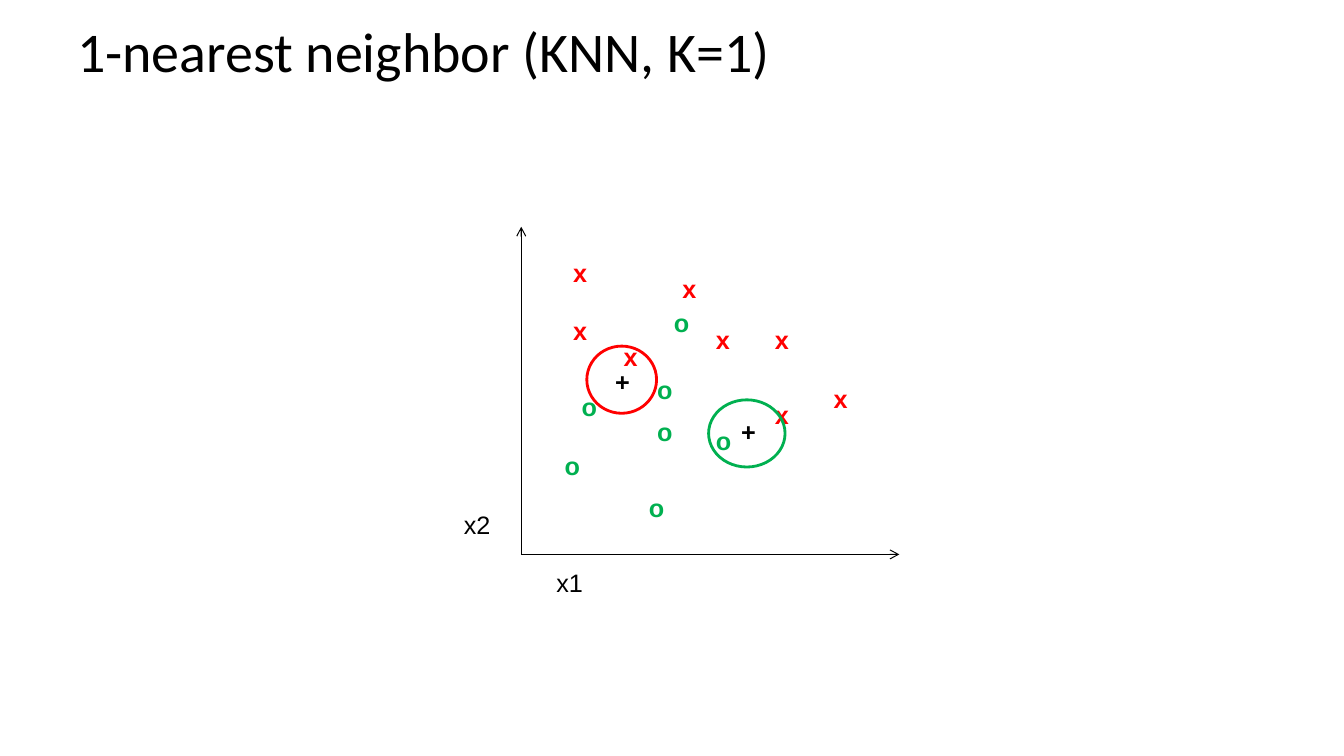
import pptx
import pptx.util
import pptx.dml.color
import pptx.enum.shapes
import pptx.enum.text
import lxml.etree

# Content: positions are (columns right, rows up) from the origin of the axes
TITLE = "1-nearest neighbor (KNN, K=1)"
RED, GREEN, BLACK = "FF0000", "00B050", "000000"
MARKS = [  # symbol, colour, bold, box width, top-left corners
    ("x", RED, True, 0.34, [(22, 28), (29, 28), (29, 19), (36, 21),
                            (5, 36), (5, 29), (18, 34), (11, 26)]),
    ("o", GREEN, True, 0.36, [(17, 30), (22, 16), (4, 13), (6, 20),
                              (14, 8), (15, 17), (15, 22)]),
    ("x2", BLACK, False, 0.47, [(-8, 6)]),
    ("x1", BLACK, False, 0.47, [(3, -1)]),
    ("+", BLACK, True, 0.35, [(10, 23), (25, 17)]),
]
AXIS_ENDS = [(0, 39), (45, 0)]
NEIGHBORHOODS = [  # colour, column, row, columns wide, rows high
    (RED, 7.8, 24.8, 8.3, 8),
    (GREEN, 22.3, 18.4, 9.1, 8),
]

# Grid: twelve cells to the inch
WIDTH, HEIGHT = 13.33, 7.5
CELL = 1 / 12
ORIGIN_X, ORIGIN_Y = 5.17, 5.5
MARK_HEIGHT = 0.4

inch = pptx.util.Inches


def color(value):
    return pptx.dml.color.RGBColor.from_string(value)


def place(column, row):
    return inch(ORIGIN_X + column * CELL), inch(ORIGIN_Y - row * CELL)


def add_text(slide, box, words, size, font, ink, bold=False):
    frame = slide.shapes.add_textbox(*box).text_frame
    run = frame.paragraphs[0].add_run()
    run.text = words
    run.font.size = pptx.util.Pt(size)
    run.font.name = font
    run.font.bold = bold
    run.font.color.rgb = color(ink)
    return frame


def add_axis(slide, end):
    axis = slide.shapes.add_connector(
        pptx.enum.shapes.MSO_CONNECTOR.STRAIGHT, *place(0, 0), *place(*end))
    axis.line.color.rgb = color(BLACK)
    axis.line.width = pptx.util.Pt(0.75)
    ns = pptx.oxml.ns.qn
    lxml.etree.SubElement(axis.line._get_or_add_ln(), ns("a:tailEnd"), type="arrow")
    lxml.etree.SubElement(axis._element.spPr, ns("a:effectLst"))


def main():
    deck = pptx.Presentation()
    deck.slide_width, deck.slide_height = inch(WIDTH), inch(HEIGHT)
    slide = deck.slides.add_slide(deck.slide_layouts[6])

    # Title
    margin = WIDTH * 0.05
    title_box = (inch(margin), 0, inch(WIDTH - 2 * margin), inch(1))
    title = add_text(slide, title_box, TITLE, 40, "Calibri", BLACK)
    title.word_wrap = True
    title.vertical_anchor = pptx.enum.text.MSO_ANCHOR.MIDDLE

    # Axes
    for end in AXIS_ENDS:
        add_axis(slide, end)

    # Samples, axis names and query points
    for symbol, ink, bold, width, corners in MARKS:
        for corner in corners:
            box = (*place(*corner), inch(width), inch(MARK_HEIGHT))
            mark = add_text(slide, box, symbol, 18, "Arial", ink, bold)
            mark.word_wrap = False
            mark.auto_size = pptx.enum.text.MSO_AUTO_SIZE.SHAPE_TO_FIT_TEXT

    # Circles around each query point and its nearest neighbor
    for ink, column, row, columns, rows in NEIGHBORHOODS:
        circle = slide.shapes.add_shape(
            pptx.enum.shapes.MSO_SHAPE.OVAL, *place(column, row),
            inch(columns * CELL), inch(rows * CELL))
        circle.shadow.inherit = False
        circle.fill.background()
        circle.line.color.rgb = color(ink)
        circle.line.width = pptx.util.Pt(2)

    deck.save("out.pptx")


if __name__ == "__main__":
    main()
